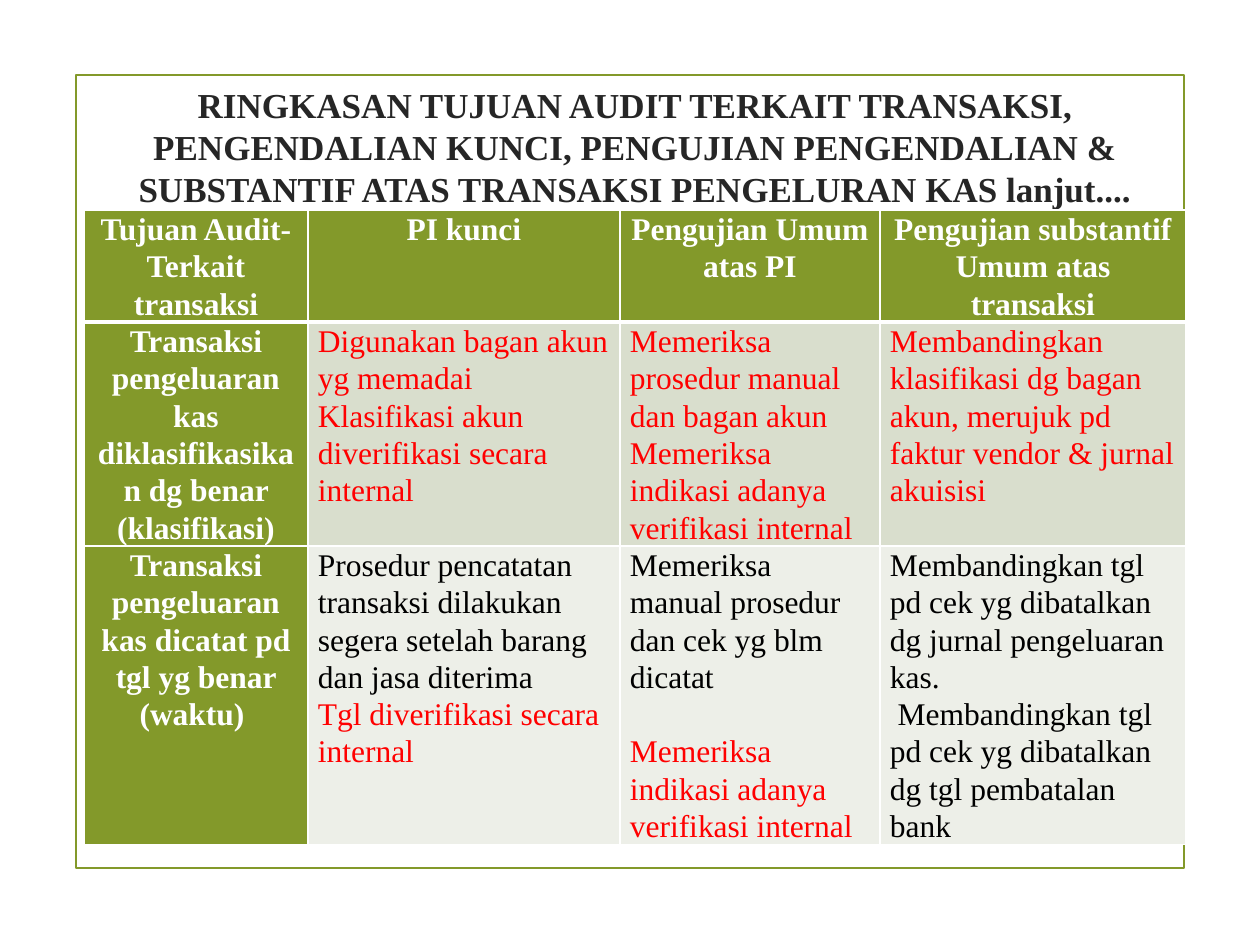
from lxml import etree
from pptx import Presentation
from pptx.dml.color import RGBColor
from pptx.enum.shapes import MSO_SHAPE
from pptx.enum.text import MSO_ANCHOR, MSO_AUTO_SIZE, PP_ALIGN
from pptx.oxml.ns import qn
from pptx.util import Pt

RECT = MSO_SHAPE.RECTANGLE
MIDDLE, NO_FIT = MSO_ANCHOR.MIDDLE, MSO_AUTO_SIZE.NONE
LEFT, CENTER = PP_ALIGN.LEFT, PP_ALIGN.CENTER
PX = 914400 / 126
FONT = "Times New Roman"
GREEN, WHITE, BLACK, RED, DARK = "83992A", "FFFFFF", "000000", "FF0000", "262626"
BANDS = ["D9DECD", "EDEFE8"]
BLANK_LINE = 21.3

TITLE = ("RINGKASAN TUJUAN AUDIT TERKAIT TRANSAKSI, PENGENDALIAN KUNCI, "
         "PENGUJIAN PENGENDALIAN & SUBSTANTIF ATAS TRANSAKSI PENGELURAN KAS lanjut....")
HEADERS = ["Tujuan Audit-Terkait transaksi", "PI kunci", "Pengujian Umum atas PI",
           "Pengujian substantif Umum atas transaksi"]
# Each row: objective, then cells of (text, colour, space before in points)
ROWS = [
    ("Transaksi pengeluaran kas diklasifikasikan dg benar (klasifikasi)", [
        [("Digunakan bagan akun yg memadai", RED, 0),
         ("Klasifikasi akun diverifikasi secara internal", RED, 0)],
        [("Memeriksa prosedur manual dan bagan akun", RED, 0),
         ("Memeriksa indikasi adanya verifikasi internal", RED, 0)],
        [("Membandingkan klasifikasi dg bagan akun, merujuk pd faktur vendor "
          "& jurnal akuisisi", RED, 0)],
    ]),
    ("Transaksi pengeluaran kas dicatat pd tgl yg benar (waktu) ", [
        [("Prosedur pencatatan transaksi dilakukan segera setelah barang dan jasa "
          "diterima", BLACK, 0),
         ("Tgl diverifikasi secara internal", RED, 0)],
        [("Memeriksa manual prosedur dan cek yg blm dicatat", BLACK, 0),
         ("Memeriksa indikasi adanya verifikasi internal", RED, BLANK_LINE)],
        [("Membandingkan tgl pd cek yg dibatalkan dg jurnal pengeluaran kas.", BLACK, 0),
         (" Membandingkan tgl pd cek yg dibatalkan dg tgl pembatalan bank", BLACK, 0)],
    ]),
]
COLS = [224, 312, 260, 306]
HEIGHTS = [112, 224, 298]


def px(n):
    return round(n * PX)


def rgb(value):
    return RGBColor.from_string(value)


def place(sp, x, y, w, h):
    sp.left, sp.top, sp.width, sp.height = map(px, (x, y, w, h))


def style(p, size, color, bold, align, spacing):
    p.alignment, p.line_spacing = align, spacing
    f = p.font
    f.name, f.size, f.bold = FONT, Pt(size), bold
    f.color.rgb = rgb(color)


def set_borders(cell, bottom):
    tcPr = cell._tc.get_or_add_tcPr()
    widths = {"a:lnL": 1, "a:lnR": 1, "a:lnT": 1, "a:lnB": bottom}
    for i, (tag, width) in enumerate(widths.items()):
        ln = etree.Element(qn(tag), w=str(Pt(width)))
        fill = etree.SubElement(ln, qn("a:solidFill"))
        etree.SubElement(fill, qn("a:srgbClr"), val=WHITE)
        tcPr.insert(i, ln)


def fill_cell(cell, items, fill, heading=False, bottom=1):
    cell.margin_left = cell.margin_right = px(10)
    cell.margin_top = cell.margin_bottom = 0
    cell.fill.solid()
    cell.fill.fore_color.rgb = rgb(fill)
    set_borders(cell, bottom)
    tf = cell.text_frame
    for i, (text, color, before) in enumerate(items):
        p = tf.add_paragraph() if i else tf.paragraphs[0]
        p.text = text
        if before:
            p.space_before = Pt(before)
        style(p, 18, color, heading, CENTER if heading else LEFT, 1.07)


def add_frame(s, x, y, w, h):
    sp = s.shapes.add_shape(RECT, px(x), px(y), px(w), px(h))
    sp.shadow.inherit = False
    sp.fill.background()
    sp.line.color.rgb = rgb(GREEN)
    sp.line.width = Pt(1.25)


def add_title(s, x, y, w, h):
    sp = s.shapes.title
    place(sp, x, y, w, h)
    tf = sp.text_frame
    tf.word_wrap, tf.auto_size, tf.vertical_anchor = True, NO_FIT, MIDDLE
    p = tf.paragraphs[0]
    p.text = TITLE
    style(p, 20, DARK, True, CENTER, 1.0)


def add_audit_table(s, x, y):
    shape = s.shapes.add_table(len(HEIGHTS), len(COLS), px(x), px(y),
                               px(sum(COLS)), px(sum(HEIGHTS)))
    table = shape.table
    for col, width in zip(table.columns, COLS):
        col.width = px(width)
    for row, height in zip(table.rows, HEIGHTS):
        row.height = px(height)
    for c, text in enumerate(HEADERS):
        fill_cell(table.cell(0, c), [(text, WHITE, 0)], GREEN, True, 3)
    for r, ((objective, cells), band) in enumerate(zip(ROWS, BANDS), 1):
        fill_cell(table.cell(r, 0), [(objective, WHITE, 0)], GREEN, True)
        for c, items in enumerate(cells, 1):
            fill_cell(table.cell(r, c), items, band)


def main():
    prs = Presentation()
    prs.slide_width, prs.slide_height = px(1260), px(945)
    s = prs.slides.add_slide(prs.slide_layouts[5])
    add_frame(s, 76, 75, 1108, 793)
    add_title(s, 84, 84, 1102, 126)
    add_audit_table(s, 84, 210)
    prs.save("out.pptx")


if __name__ == "__main__":
    main()
